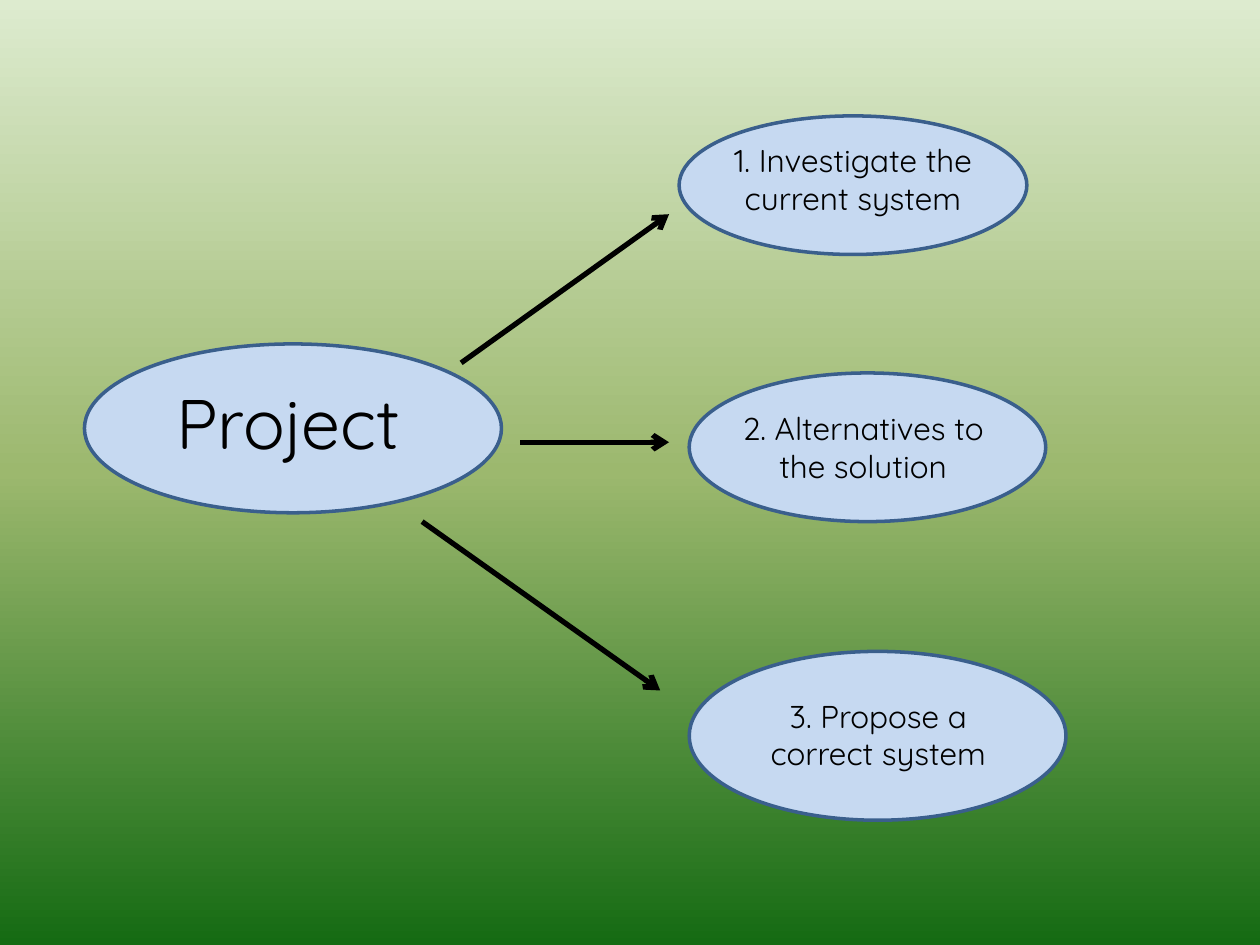
"""Build a slide that links a project to its three steps."""
from copy import deepcopy

from pptx import Presentation, util as u
from pptx.dml.color import RGBColor
from pptx.enum import shapes, text
from pptx.oxml.ns import qn
from pptx.oxml.xmlchemy import OxmlElement

FONT = "Quicksand"
COLORS = {"oval": "C6D9F1", "edge": "3A5F8C", "ink": "000000"}
SKY = [(0, "DDEBCF"), (0.5, "9CB86E"), (1, "156B13")]
CENTER, LEFT = text.PP_ALIGN.CENTER, text.PP_ALIGN.LEFT
NODES = [
    ("Project", 40, LEFT, (0.67, 2.73, 3.31, 1.34), (1.3, 2.96, 2.68, 0.77)),
    ("1. Investigate the current system", 18, CENTER,
     (5.39, 0.92, 2.76, 1.1), (5.55, 1.07, 2.44, 0.71)),
    ("2. Alternatives to the solution", 18, CENTER,
     (5.47, 2.96, 2.83, 1.18), (5.63, 3.2, 2.44, 0.71)),
    ("3. Propose a correct system", 18, CENTER,
     (5.47, 5.17, 2.99, 1.34), (5.79, 5.48, 2.36, 0.71)),
]
ARROWS = [
    (3.66, 2.88, 5.31, 1.7),
    (4.13, 3.51, 5.31, 3.51),
    (3.35, 4.14, 5.24, 5.48),
]


def color(name):
    return RGBColor.from_string(COLORS[name])


def inches(box):
    return [u.Inches(n) for n in box]


def paint_sky(slide):
    fill = slide.background.fill
    fill.gradient()
    fill.gradient_angle = 270
    stops = slide.element.find(".//" + qn("a:gsLst"))
    stops.append(deepcopy(stops[0]))
    for stop, (pos, tone) in zip(fill.gradient_stops, SKY):
        stop.position = pos
        stop.color.rgb = RGBColor.from_string(tone)


def add_node(slide, words, size, align, oval, box):
    shape = slide.shapes.add_shape(shapes.MSO_SHAPE.OVAL, *inches(oval))
    shape.shadow.inherit = False
    shape.fill.solid()
    shape.fill.fore_color.rgb = color("oval")
    shape.line.color.rgb = color("edge")
    shape.line.width = u.Pt(2)
    frame = slide.shapes.add_textbox(*inches(box)).text_frame
    frame.word_wrap = True
    frame.auto_size = text.MSO_AUTO_SIZE.SHAPE_TO_FIT_TEXT
    para = frame.paragraphs[0]
    para.text = words
    para.alignment = align
    para.font.name = FONT
    para.font.size = u.Pt(size)
    para.font.color.rgb = color("ink")


def add_arrow(slide, ends):
    arrow = slide.shapes.add_connector(
        shapes.MSO_CONNECTOR.STRAIGHT, *inches(ends))
    arrow.line.color.rgb = color("ink")
    arrow.line.width = u.Pt(3)
    props = arrow.element.spPr
    tail = OxmlElement("a:tailEnd")
    tail.set("type", "arrow")
    props.find(qn("a:ln")).append(tail)
    props.append(OxmlElement("a:effectLst"))


def main():
    deck = Presentation()
    deck.slide_width, deck.slide_height = inches((10, 7.5))
    slide = deck.slides.add_slide(deck.slide_layouts[6])
    paint_sky(slide)
    for node in NODES:
        add_node(slide, *node)
    for ends in ARROWS:
        add_arrow(slide, ends)
    deck.save("out.pptx")


if __name__ == "__main__":
    main()
